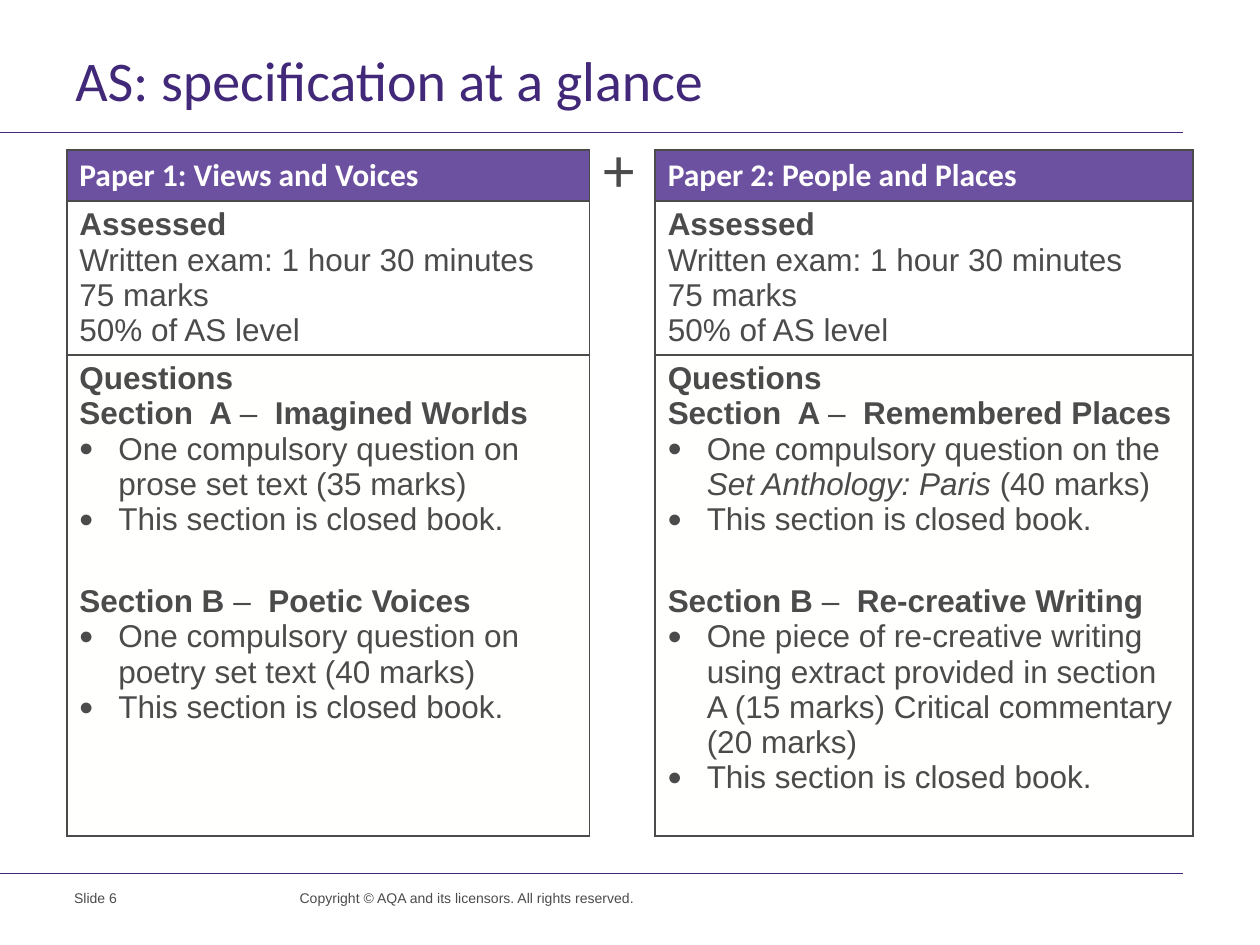
from lxml import etree
from pptx import Presentation
from pptx import util as u
from pptx.dml.color import RGBColor
from pptx.enum import shapes, text
from pptx.oxml.ns import qn

PURPLE, HEADER, GREY, WHITE, PALE = "412878", "6D51A1", "4B4B4B", "FFFFFF", "FFFFFE"

# Content: a paragraph is (kind, [(words, style)]), style: b bold, i italic
ASSESSED = [("plain", [("Assessed", "b")]),
            ("plain", [("Written exam: 1 hour 30 minutes", "")]),
            ("plain", [("75 marks", "")]),
            ("plain", [("50% of AS level", "")])]
QUESTIONS = ("plain", [("Questions", "b")])
CLOSED = ("bullet", [("This section is closed book.", "")])


def heading(section, dash, name):
    return "plain", [(section, "b"), (dash, ""), (name, "b")]


PAPERS = [
    ("Paper 1: Views and Voices",
     [QUESTIONS, heading("Section  A ", "– ", " Imagined Worlds"),
      ("bullet", [("One compulsory question on prose set text (35 marks)", "")]), CLOSED],
     [heading("Section B ", "– ", " Poetic Voices"),
      ("bullet", [("One compulsory question on poetry set text (40 marks)", "")]), CLOSED]),
    ("Paper 2: People and Places",
     [QUESTIONS, heading("Section  A ", "–  ", "Remembered Places"),
      ("bullet", [("One compulsory question on the ", ""),
                  ("Set Anthology: Paris ", "i"), ("(40 marks)", "")]), CLOSED],
     [heading("Section B ", "–  ", "Re-creative Writing"),
      ("bullet", [("One piece of re-creative writing using extract provided in "
                   "section A (15 marks) Critical commentary (20 marks)", "")]), CLOSED]),
]
# words, (left, top, width, height), font format, colour, line spacing in points
LABELS = [
    ("AS: specification at a glance", (0.5, 0.46, 9.5, 0.48),
     {"name": "Calibri", "size": u.Pt(32)}, PURPLE, 28),
    ("Slide 6", (0.49, 7.01, 1.56, 0.38), {"name": "Arial", "size": u.Pt(8)}, GREY, None),
    ("Copyright © AQA and its licensors. All rights reserved.", (2.28, 7.01, 3.2, 0.26),
     {"name": "Arial", "size": u.Pt(8)}, GREY, None),
    ("+", (4.69, 0.98, 0.43, 0.71), {"name": "Calibri", "size": u.Pt(36)}, GREY, None),
]
RULES = [1.05, 6.93]
COLUMNS = [4.15, 0.52, 4.27]
ROWS = [0.37, 1.21, 1.77, 2.05]
HEAD = {"name": "Calibri", "size": u.Pt(18)}
BODY = {"name": "Arial", "size": u.Pt(18)}


def rgb(value):
    return RGBColor.from_string(value)


def add_span(para, words, font, colour, style=""):
    span = para.add_run()
    span.text = words
    for key, value in {**font, "bold": "b" in style, "italic": "i" in style}.items():
        setattr(span.font, key, value)
    span.font.color.rgb = rgb(colour)


def add_bullet(para):
    props = para._p.get_or_add_pPr()
    props.set("marL", str(u.Inches(0.31)))
    props.set("indent", str(-u.Inches(0.31)))
    etree.SubElement(props, qn("a:buSzPct"), val="125000")
    etree.SubElement(props, qn("a:buFont"), typeface="Arial")
    etree.SubElement(props, qn("a:buChar"), char="•")


def set_borders(cell, sides):
    props = cell._tc.get_or_add_tcPr()
    for place, side in enumerate("LRTB"):
        line = etree.Element(qn("a:ln" + side), w=str(u.Pt(1)))
        if side in sides:
            fill = etree.SubElement(line, qn("a:solidFill"))
            etree.SubElement(fill, qn("a:srgbClr"), val=GREY)
        else:
            etree.SubElement(line, qn("a:noFill"))
        props.insert(place, line)


def fill_cell(cell, paragraphs, font, colour, fill, sides):
    for number, (kind, spans) in enumerate(paragraphs):
        frame = cell.text_frame
        para = frame.add_paragraph() if number else frame.paragraphs[0]
        if kind == "bullet":
            add_bullet(para)
        for words, style in spans:
            add_span(para, words, font, colour, style)
    if fill:
        cell.fill.solid()
        cell.fill.fore_color.rgb = rgb(fill)
    else:
        cell.fill.background()
    set_borders(cell, sides)


def add_label(page, words, place, font, colour, spacing):
    box = page.shapes.add_textbox(*map(u.Inches, place))
    box.text_frame.word_wrap = True
    box.text_frame.vertical_anchor = text.MSO_ANCHOR.TOP
    para = box.text_frame.paragraphs[0]
    if spacing:
        para.line_spacing = u.Pt(spacing)
    add_span(para, words, font, colour)


def add_rule(page, top):
    rule = page.shapes.add_connector(shapes.MSO_CONNECTOR.STRAIGHT, 0, u.Inches(top),
                                     u.Inches(9.39), u.Inches(top))
    rule.line.color.rgb = rgb(PURPLE)
    rule.line.width = u.Pt(0.6)
    etree.SubElement(rule._element.spPr, qn("a:effectLst"))


def add_papers(page):
    table = page.shapes.add_table(len(ROWS), len(COLUMNS), u.Inches(0.53), u.Inches(1.19),
                                  u.Inches(sum(COLUMNS)), u.Inches(sum(ROWS))).table
    table.first_row = table.horz_banding = False
    for column, width in zip(table.columns, COLUMNS):
        column.width = u.Inches(width)
    for row, height in zip(table.rows, ROWS):
        row.height = u.Inches(height)
    # Empty column between the papers
    table.cell(0, 1).merge(table.cell(3, 1))
    for row in range(len(ROWS)):
        fill_cell(table.cell(row, 1), [], BODY, GREY, None, "LR")
    # One column for each paper
    for column, (name, section_a, section_b) in zip((0, 2), PAPERS):
        cells = [([("plain", [(name, "b")])], HEAD, WHITE, HEADER, "LRTB"),
                 (ASSESSED, BODY, GREY, None, "LRTB"),
                 (section_a, BODY, GREY, PALE, "LRT"),
                 (section_b, BODY, GREY, PALE, "LRB")]
        for row, parts in enumerate(cells):
            fill_cell(table.cell(row, column), *parts)


def main():
    deck = Presentation()
    deck.slide_width, deck.slide_height = u.Inches(10), u.Inches(7.5)
    page = deck.slides.add_slide(deck.slide_layouts[6])
    for top in RULES:
        add_rule(page, top)
    add_papers(page)
    for label in LABELS:
        add_label(page, *label)
    deck.save("out.pptx")


if __name__ == "__main__":
    main()
